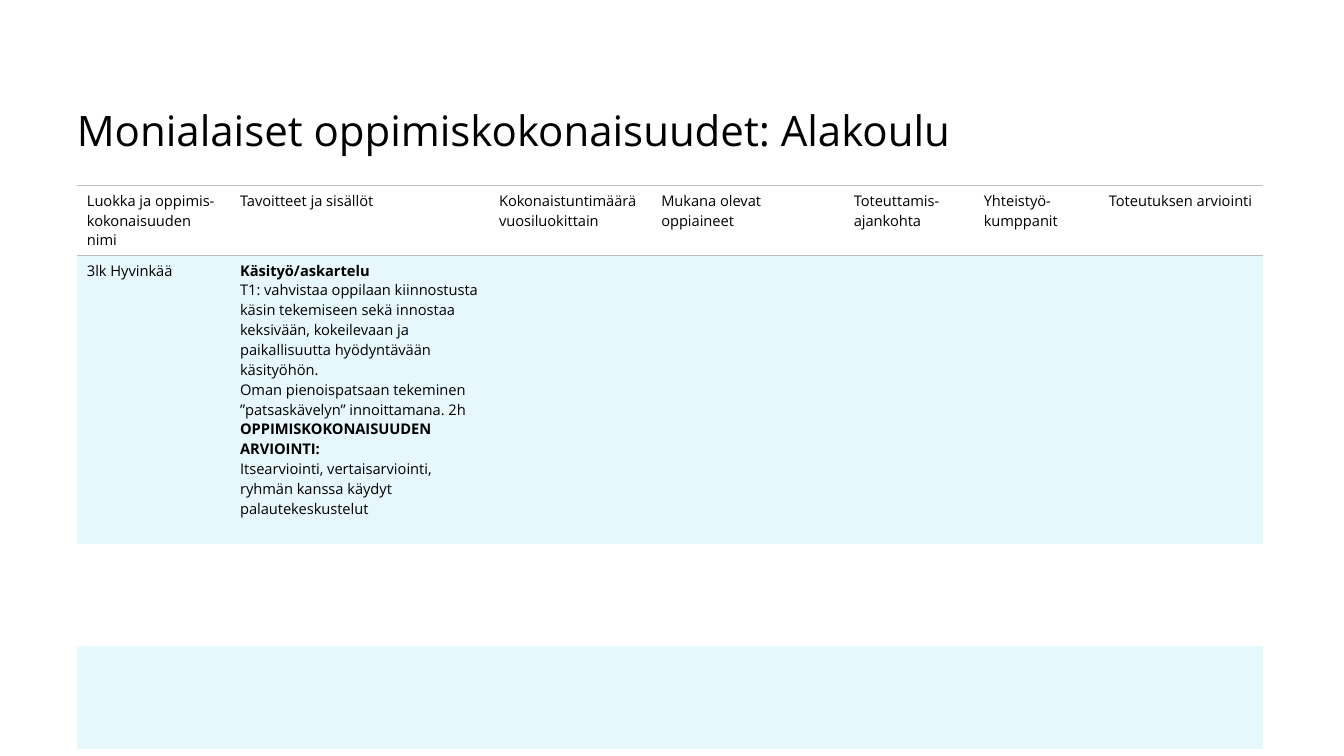
from dataclasses import dataclass

from lxml import etree
from pptx import Presentation
from pptx.dml.color import RGBColor
from pptx.enum.text import MSO_ANCHOR
from pptx.oxml.ns import qn
from pptx.util import Pt

BOTTOM = MSO_ANCHOR.BOTTOM
TITLE_ONLY = 5
NO_STYLE_NO_GRID = "{2D5ABB26-0587-4C30-8999-92F81FD0307C}"


@dataclass(frozen=True)
class Theme:
    font: str = "Open Sans"
    text: str = "000000"
    band: str = "E6F8FC"
    rule: str = "BFBFBF"
    title_size: float = 30
    table_size: float = 10.5
    rule_width: float = 1


THEME = Theme()

TITLE = "Monialaiset oppimiskokonaisuudet: Alakoulu"
HEADERS = [
    "Luokka ja oppimis-kokonaisuuden nimi",
    "Tavoitteet ja sisällöt",
    "Kokonaistuntimäärä vuosiluokittain",
    "Mukana olevat oppiaineet",
    "Toteuttamis-ajankohta",
    "Yhteistyö-kumppanit",
    "Toteutuksen arviointi",
]
# Each paragraph is (text, bold)
GOALS = [
    ("Käsityö/askartelu", True),
    ("T1: vahvistaa oppilaan kiinnostusta käsin tekemiseen sekä innostaa "
     "keksivään, kokeilevaan ja paikallisuutta hyödyntävään käsityöhön.", False),
    ("Oman pienoispatsaan tekeminen ”patsaskävelyn” innoittamana. 2h", False),
    ("OPPIMISKOKONAISUUDEN ARVIOINTI:", True),
    ("Itsearviointi, vertaisarviointi, ryhmän kanssa käydyt "
     "palautekeskustelut", False),
]
COL_WIDTHS = [109.4, 185, 115.9, 137.5, 92.9, 89.3, 117.4]
ROW_HEIGHTS = [50, 205.8, 73.4, 73.4, 82.8]
BANDED_ROWS = (1, 3)
LEFT = 54.9


def style_font(p, size, bold=False):
    font = p.font
    font.name = THEME.font
    font.size = Pt(size)
    font.bold = bold
    font.color.rgb = RGBColor.from_string(THEME.text)


def add_title(s):
    title = s.shapes.title
    title.left, title.top = Pt(LEFT), Pt(43.2)
    title.width, title.height = Pt(738), Pt(67.7)
    tf = title.text_frame
    tf.word_wrap = True
    tf.vertical_anchor = BOTTOM
    tf.margin_left = tf.margin_right = tf.margin_top = tf.margin_bottom = 0
    p = tf.paragraphs[0]
    p.text = TITLE
    p.alignment = 1
    p.line_spacing = 0.9
    style_font(p, THEME.title_size)


def write_cell(cell, paragraphs):
    tf = cell.text_frame
    for i, (text, bold) in enumerate(paragraphs):
        p = tf.add_paragraph() if i else tf.paragraphs[0]
        p.text = text
        style_font(p, THEME.table_size, bold)


def fill_cell(cell, banded):
    if banded:
        cell.fill.solid()
        cell.fill.fore_color.rgb = RGBColor.from_string(THEME.band)
    else:
        cell.fill.background()


def rule_cell(cell):
    # Borders come before the fill, top before bottom
    tc_pr = cell._tc.get_or_add_tcPr()
    for i, side in enumerate(("a:lnT", "a:lnB")):
        ln = etree.Element(qn(side), w=str(Pt(THEME.rule_width)))
        fill = etree.SubElement(ln, qn("a:solidFill"))
        etree.SubElement(fill, qn("a:srgbClr"), val=THEME.rule)
        tc_pr.insert(i, ln)


def add_table(s):
    frame = s.shapes.add_table(
        len(ROW_HEIGHTS), len(COL_WIDTHS), Pt(LEFT), Pt(132.5),
        Pt(sum(COL_WIDTHS)), Pt(sum(ROW_HEIGHTS)))
    table = frame.table
    table.horz_banding = False
    table._tbl.tblPr.find(qn("a:tableStyleId")).text = NO_STYLE_NO_GRID
    for column, width in zip(table.columns, COL_WIDTHS):
        column.width = Pt(width)
    for row, height in zip(table.rows, ROW_HEIGHTS):
        row.height = Pt(height)

    # Text by row and column; the remaining cells stay empty
    content = {(0, c): [(text, False)] for c, text in enumerate(HEADERS)}
    content[1, 0] = [("3lk Hyvinkää", False)]
    content[1, 1] = GOALS
    for r in range(len(ROW_HEIGHTS)):
        for c in range(len(COL_WIDTHS)):
            cell = table.cell(r, c)
            write_cell(cell, content.get((r, c), []))
            fill_cell(cell, r in BANDED_ROWS)
            if r == 0:
                rule_cell(cell)


def main():
    prs = Presentation()
    prs.slide_width, prs.slide_height = Pt(960), Pt(540)
    s = prs.slides.add_slide(prs.slide_layouts[TITLE_ONLY])
    add_title(s)
    add_table(s)
    prs.save("out.pptx")


if __name__ == "__main__":
    main()
